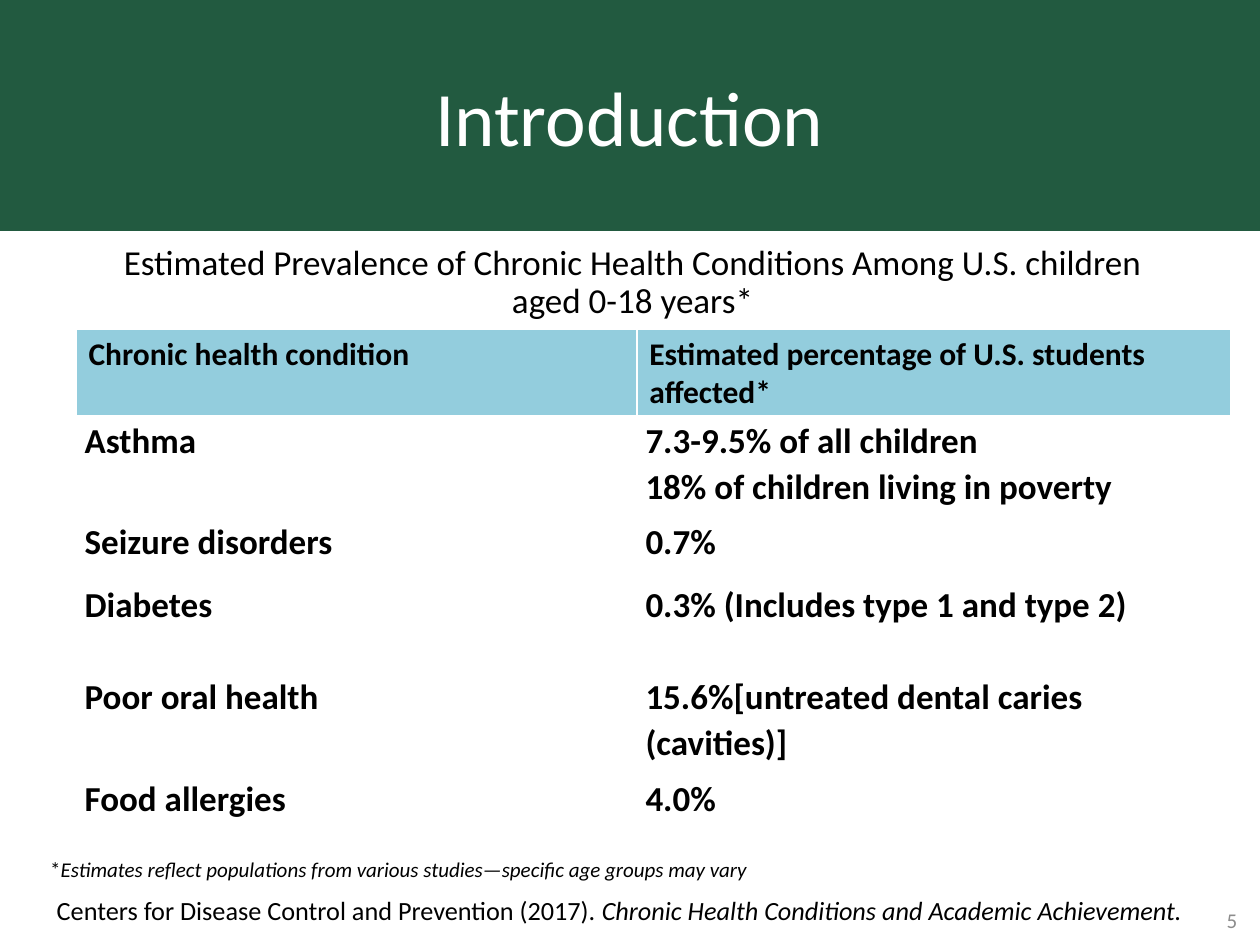
from lxml.etree import SubElement
from pptx import Presentation
from pptx.dml.color import RGBColor
from pptx.enum.shapes import MSO_SHAPE
from pptx.enum.text import MSO_ANCHOR, PP_ALIGN
from pptx.oxml.ns import qn
from pptx.util import Pt

COLORS = {
    "green": "225A40",
    "blue": "93CDDD",
    "white": "FFFFFF",
    "black": "000000",
    "gray": "8C8C8C",
}
HEADS = ("Chronic health condition",
         "Estimated percentage of U.S. students affected*")
# Row height, condition, lines of the estimate
ROWS = [
    (57.6, "Asthma", ["7.3-9.5% of all children",
                      "18% of children living in poverty"]),
    (36, "Seizure disorders", ["0.7%"]),
    (52.6, "Diabetes", ["0.3% (Includes type 1 and type 2)"]),
    (58.3, "Poor oral health", ["15.6%[untreated dental caries (cavities)]"]),
    (33.8, "Food allergies", ["4.0%"]),
]


def color(name):
    return RGBColor.from_string(COLORS[name])


def write(frame, lines, size=20, tint="black", bold=False,
          align=PP_ALIGN.LEFT, space=None, after=0):
    """Each line is a list of (text, italic) runs or a plain string."""
    frame.word_wrap = True
    for i, line in enumerate(lines):
        para = frame.paragraphs[0] if i == 0 else frame.add_paragraph()
        para.alignment = align
        para.line_spacing = space
        para.space_after = Pt(after)
        runs = [(line, False)] if isinstance(line, str) else line
        for text, italic in runs:
            run = para.add_run()
            run.text = text
            font = run.font
            font.name, font.size = "Calibri", Pt(size)
            font.bold, font.italic = bold, italic
            font.color.rgb = color(tint)


def add_text(slide, box, lines, anchor=MSO_ANCHOR.TOP, **style):
    frame = slide.shapes.add_textbox(*map(Pt, box)).text_frame
    frame.vertical_anchor = anchor
    write(frame, lines, **style)


def add_band(slide, width, height):
    band = slide.shapes.add_shape(MSO_SHAPE.RECTANGLE, 0, 0, width, height)
    band.shadow.inherit = False
    band.fill.solid()
    band.fill.fore_color.rgb = color("green")
    band.line.fill.background()


def set_edges(cell, low):
    props = cell._tc.get_or_add_tcPr()
    for side, width in (("L", 1), ("R", 1), ("T", 1), ("B", low)):
        edge = SubElement(props, qn(f"a:ln{side}"), w=str(Pt(width)))
        fill = SubElement(edge, qn("a:solidFill"))
        SubElement(fill, qn("a:srgbClr"), val=COLORS["white"])


def add_grid(slide):
    sizes = [50] + [row[0] for row in ROWS]
    shape = slide.shapes.add_table(len(sizes), 2, Pt(43.4), Pt(188),
                                   Pt(660), Pt(sum(sizes)))
    table = shape.table
    table.horz_banding = False
    for col, width in zip(table.columns, (320.5, 339.5)):
        col.width = Pt(width)
    for row, size in zip(table.rows, sizes):
        row.height = Pt(size)

    # Heading row
    for cell, text in zip(table.rows[0].cells, HEADS):
        set_edges(cell, 3)
        cell.fill.solid()
        cell.fill.fore_color.rgb = color("blue")
        write(cell.text_frame, [text], size=18, bold=True)

    # Conditions and estimates
    for i, (_, name, lines) in enumerate(ROWS, 1):
        for cell, texts in zip(table.rows[i].cells, ([name], lines)):
            set_edges(cell, 1)
            cell.fill.background()
            cell.margin_left = cell.margin_right = Pt(5)
            cell.margin_top = cell.margin_bottom = 0
            write(cell.text_frame, texts, bold=True, space=1.07)


def main():
    deck = Presentation()
    deck.slide_width, deck.slide_height = Pt(720), Pt(540)
    slide = deck.slides.add_slide(deck.slide_layouts[6])
    mid, center = MSO_ANCHOR.MIDDLE, PP_ALIGN.CENTER

    # Heading
    add_band(slide, Pt(720), Pt(132))
    add_text(slide, (98, 36, 523.5, 60.5), ["Introduction"],
             size=44, tint="white", align=center)

    # Table with its caption
    add_text(slide, (60, 138, 603, 48),
             ["Estimated Prevalence of Chronic Health Conditions Among "
              "U.S. children aged 0-18 years*"],
             anchor=mid, align=center, space=0.9)
    add_grid(slide)

    # Notes and page number
    add_text(slide, (21.6, 486, 702, 21.8),
             [[("*", False), ("Estimates reflect populations from various "
                              "studies—specific age groups may vary", True)]],
             anchor=mid, size=12, after=6)
    add_text(slide, (546, 511, 168, 29), ["5"], anchor=mid,
             size=12, tint="gray", align=PP_ALIGN.RIGHT)
    add_text(slide, (-6, 507.6, 720, 25.4),
             [[("Centers for Disease Control and Prevention (2017). ", False),
               ("Chronic Health Conditions and Academic Achievement.", True)]],
             size=15, align=center)
    deck.save("out.pptx")


if __name__ == "__main__":
    main()
